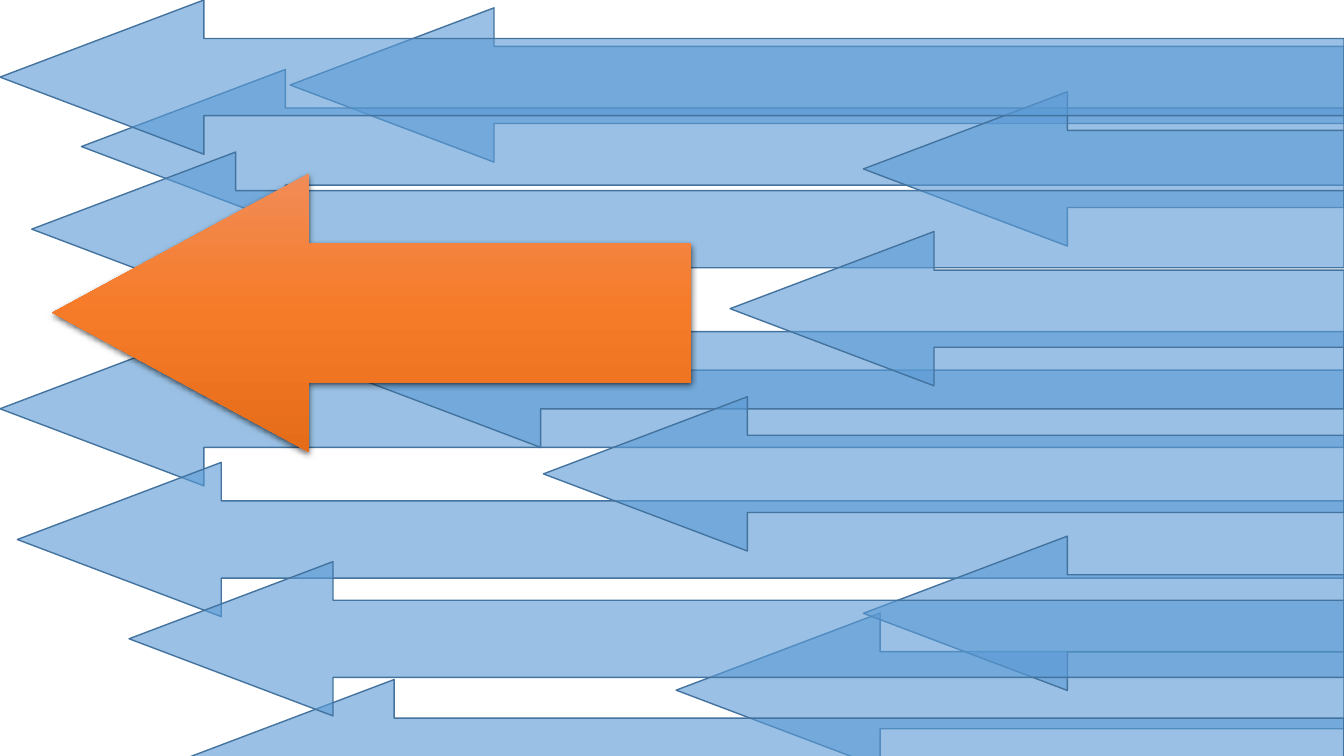
from copy import deepcopy

from lxml.etree import SubElement
from pptx import Presentation
from pptx.dml.color import RGBColor
from pptx.enum.shapes import MSO_SHAPE as SHAPE
from pptx.oxml.ns import qn
from pptx.util import Pt

SLIDE_W, SLIDE_H = 960, 540

# Left and top of each blue arrow, back to front; all end at the right edge
BLUE_ARROWS = [
    (0, 236.9), (207.2, 5.6), (58.2, 49.6), (12.4, 330.3), (483, 437.9),
    (135.9, 485.4), (240.5, 209.4), (616.7, 65.6), (616.7, 383),
    (388.2, 283.4), (22.7, 108.6), (521.5, 165.4), (92.2, 401.2), (0, 0),
]
BLUE_H = 110.2
BLUE_HEAD = 1.322
BLUE, BLUE_LINE, BLUE_ALPHA = "5B9BD5", "43739E", 61

ORANGE_ARROW = (37.4, 123.9, 456.4, 198.9)
ORANGE_HEAD = 0.921
ORANGE_STOPS = [(0, "F18C57"), (0.5, "F67B28"), (1, "E56C19")]


def rgb(color):
    return RGBColor.from_string(color)


def set_alpha(color_element, percent):
    SubElement(color_element, qn("a:alpha"), val=str(percent * 1000))


def add_arrow(slide, left, top, width, height, head):
    """Add a left arrow; head is its head length relative to its height."""
    sp = slide.shapes.add_shape(
        SHAPE.LEFT_ARROW, Pt(left), Pt(top), Pt(width), Pt(height))
    sp.adjustments[0] = 0.5
    sp.adjustments[1] = head
    sp.shadow.inherit = False
    return sp


def add_blue_arrow(slide, left, top):
    sp = add_arrow(slide, left, top, SLIDE_W - left, BLUE_H, BLUE_HEAD)
    sp.fill.solid()
    sp.fill.fore_color.rgb = rgb(BLUE)
    set_alpha(sp._element.spPr.find(qn("a:solidFill"))[0], BLUE_ALPHA)
    sp.line.color.rgb = rgb(BLUE_LINE)
    sp.line.width = Pt(1)


def add_orange_arrow(slide):
    sp = add_arrow(slide, *ORANGE_ARROW, ORANGE_HEAD)
    sp.line.fill.background()
    sp.fill.gradient()
    sp.fill.gradient_angle = 270
    spPr = sp._element.spPr
    stop_list = spPr.find(qn("a:gradFill")).find(qn("a:gsLst"))
    stop_list.append(deepcopy(stop_list[-1]))
    for stop, (position, color) in zip(sp.fill.gradient_stops, ORANGE_STOPS):
        stop.position = position
        stop.color.rgb = rgb(color)

    shadow = SubElement(
        spPr.find(qn("a:effectLst")), qn("a:outerShdw"),
        blurRad=str(Pt(4.5)), dist=str(Pt(1.5)), dir=str(90 * 60000),
        algn="ctr", rotWithShape="0")
    set_alpha(SubElement(shadow, qn("a:srgbClr"), val="000000"), 63)


def main():
    prs = Presentation()
    prs.slide_width, prs.slide_height = Pt(SLIDE_W), Pt(SLIDE_H)
    slide = prs.slides.add_slide(prs.slide_layouts[6])
    for left, top in BLUE_ARROWS:
        add_blue_arrow(slide, left, top)
    add_orange_arrow(slide)
    prs.save("out.pptx")


if __name__ == "__main__":
    main()
